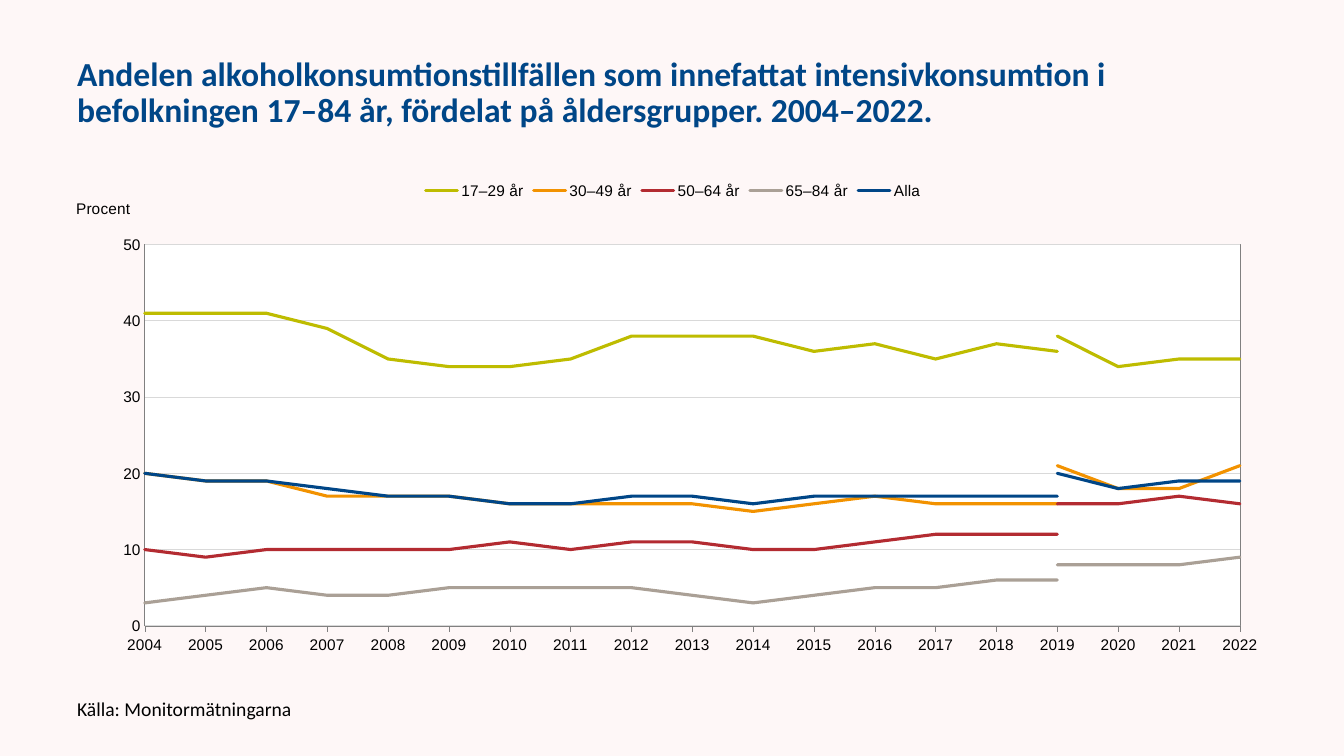
from lxml.etree import SubElement
from pptx import Presentation
from pptx.chart.data import CategoryChartData
from pptx.dml.color import RGBColor
from pptx.enum.chart import XL_CHART_TYPE, XL_LEGEND_POSITION, XL_TICK_MARK
from pptx.enum.text import MSO_ANCHOR
from pptx.oxml import parse_xml
from pptx.oxml.ns import nsdecls, qn
from pptx.util import Pt

COLORS = {
    "background": "FEF7F7", "title": "004687", "text": "000000",
    "plot": "FFFFFF", "axis": "808080", "grid": "D9D9D9",
    "17–29 år": "BEBC00", "30–49 år": "F29200", "50–64 år": "B32B31",
    "65–84 år": "AAA096", "Alla": "004687",
}
YEARS = range(2004, 2023)
AGE_GROUPS = {
    "17–29 år": (
        {2004: [41, 41, 41, 39, 35, 34, 34, 35, 38, 38, 38, 36, 37, 35, 37, 36]},
        {2019: [38, 34, 35, 35]}),
    "30–49 år": (
        {2004: [20, 19, 19, 17, 17, 17, 16, 16, 16, 16, 15, 16, 17, 16, 16, 16]},
        {2019: [21, 18, 18, 21]}),
    "50–64 år": (
        {2004: [10, 9, 10, 10, 10, 10, 11, 10, 11, 11, 10, 10, 11, 12, 12, 12]},
        {2019: [16, 16, 17, 16]}),
    "65–84 år": (
        {2004: [3, 4, 5, 4, 4, 5, 5, 5, 5, 4, 3], 2019: [8, 8, 8, 9]},
        {2014: [3, 4, 5, 5, 6, 6]}),
    "Alla": (
        {2004: [20, 19, 19, 18, 17, 17, 16, 16, 17, 17, 16, 17, 17, 17, 17, 17]},
        {2019: [20, 18, 19, 19]}),
}


def rgb(name):
    """Return the named colour."""
    return RGBColor.from_string(COLORS[name])


def style_line(line, color, width):
    """Give a line its colour and width in points."""
    line.color.rgb = rgb(color)
    line.width = Pt(width)


def style_font(font, size, color="text", name="Arial", bold=False):
    """Give a font its name, size, colour and weight."""
    font.name, font.size, font.bold = name, Pt(size), bold
    font.color.rgb = rgb(color)


def add_text(s, box, text, size, color, bold=False, spacing=1.0):
    """Add a one-paragraph text box, centred vertically in its box."""
    tf = s.shapes.add_textbox(*(Pt(v) for v in box)).text_frame
    tf.word_wrap = True
    tf.vertical_anchor = MSO_ANCHOR.MIDDLE
    p = tf.paragraphs[0]
    p.line_spacing = spacing
    r = p.add_run()
    r.text = text
    style_font(r.font, size, color, "Calibri", bold)


def expand(segments):
    """Spread segments keyed by first year over all years."""
    points = {first + i: v for first, vals in segments.items()
              for i, v in enumerate(vals)}
    return [points.get(year) for year in YEARS]


def set_layout(parent, index, **edges):
    """Place a chart part by fractions of the chart area."""
    for old in parent.findall(qn("c:layout")):
        parent.remove(old)
    layout = parse_xml(f"<c:layout {nsdecls('c')}><c:manualLayout/></c:layout>")
    for tag, val in edges.items():
        SubElement(layout[0], qn(f"c:{tag}")).set("val", str(val))
    parent.insert(index, layout)


def style_axes(chart):
    """Format both axes and put the value title above the axis."""
    years, share = chart.category_axis, chart.value_axis
    for axis, width in ((years, 0.25), (share, 0.5)):
        style_font(axis.tick_labels.font, 11)
        style_line(axis.format.line, "axis", width)
        axis.minor_tick_mark = XL_TICK_MARK.NONE
    years.major_tick_mark = XL_TICK_MARK.OUTSIDE
    share.major_tick_mark = XL_TICK_MARK.NONE
    share.minimum_scale, share.maximum_scale, share.major_unit = 0, 50, 10
    share.tick_labels.number_format = "0"
    share.tick_labels.number_format_is_linked = False
    share.has_major_gridlines = True
    style_line(share.major_gridlines.format.line, "grid", 0.75)
    r = share.axis_title.text_frame.paragraphs[0].add_run()
    r.text = "Procent"
    style_font(r.font, 11)
    plot_area = chart._chartSpace.chart.plotArea
    value_axis = plot_area.find(qn("c:valAx"))
    value_axis.find(qn("c:crossBetween")).set("val", "midCat") \
        if value_axis.find(qn("c:crossBetween")) is not None else \
        value_axis.find(qn("c:crosses")).addnext(
            parse_xml(f'<c:crossBetween {nsdecls("c")} val="midCat"/>'))
    title = value_axis.find(qn("c:title"))
    body = title.find(".//" + qn("a:bodyPr"))
    body.set("rot", "0")
    body.set("vert", "horz")
    set_layout(title, 1, xMode="edge", yMode="edge", x=0.005, y=0.05)


def style_plot_area(chart):
    """Fix the inner plot area and give it a fill and a border."""
    plot_area = chart._chartSpace.chart.plotArea
    set_layout(plot_area, 0, layoutTarget="inner", xMode="edge", yMode="edge",
               x=0.064, y=0.149, w=0.904, h=0.764)
    plot_area.append(parse_xml(
        f'<c:spPr {nsdecls("c", "a")}>'
        f'<a:solidFill><a:srgbClr val="{COLORS["plot"]}"/></a:solidFill>'
        f'<a:ln w="{Pt(0.5)}"><a:solidFill><a:srgbClr val="{COLORS["axis"]}"/>'
        '</a:solidFill></a:ln></c:spPr>'))


def style_legend(chart):
    """Show one legend entry for each age group."""
    chart.has_legend = True
    legend = chart.legend
    legend.position = XL_LEGEND_POSITION.TOP
    legend.include_in_layout = False
    style_font(legend.font, 11)
    anchor = chart._chartSpace.chart.find(qn("c:legend")).find(qn("c:legendPos"))
    for i in reversed(range(1, 2 * len(AGE_GROUPS), 2)):
        anchor.addnext(parse_xml(
            f'<c:legendEntry {nsdecls("c")}><c:idx val="{i}"/>'
            '<c:delete val="1"/></c:legendEntry>'))


def add_age_chart(s, box):
    """Add the line chart with two series for each age group."""
    data = CategoryChartData(number_format="0")
    data.categories = [str(year) for year in YEARS]
    for i, (group, (main, rest)) in enumerate(AGE_GROUPS.items(), 1):
        data.add_series(group, expand(main))
        data.add_series(f"Series {2 * i}", expand(rest))
    chart = s.shapes.add_chart(
        XL_CHART_TYPE.LINE, *(Pt(v) for v in box), data).chart
    chart.has_title = False
    style_font(chart.font, 11)
    plot = chart.plots[0]
    plot.vary_by_categories = False
    groups = list(AGE_GROUPS)
    for i, series in enumerate(plot.series):
        series.smooth = False
        style_line(series.format.line, groups[i // 2], 2.25)
        series.format.line._get_or_add_ln().set("cap", "rnd")
    style_axes(chart)
    style_plot_area(chart)
    style_legend(chart)


def build_chart_slide(prs):
    """Build the slide with title, age chart and source."""
    s = prs.slides.add_slide(prs.slide_layouts[6])
    s.background.fill.solid()
    s.background.fill.fore_color.rgb = rgb("background")
    left = 48
    add_text(s, (left, 21.6, 864, 90),
             "Andelen alkoholkonsumtionstillfällen som innefattat "
             "intensivkonsumtion i befolkningen 17–84 år, fördelat på "
             "åldersgrupper. 2004–2022.", 24, "title", True, 0.9)
    add_age_chart(s, (left, 121.7, 865.4, 356.4))
    add_text(s, (left, 496.8, 432, 21.6), "Källa: Monitormätningarna",
             14, "text", spacing=0.8)


def main():
    """Create the presentation and save it."""
    prs = Presentation()
    prs.slide_width, prs.slide_height = Pt(960), Pt(540)
    build_chart_slide(prs)
    prs.save("out.pptx")


if __name__ == "__main__":
    main()
